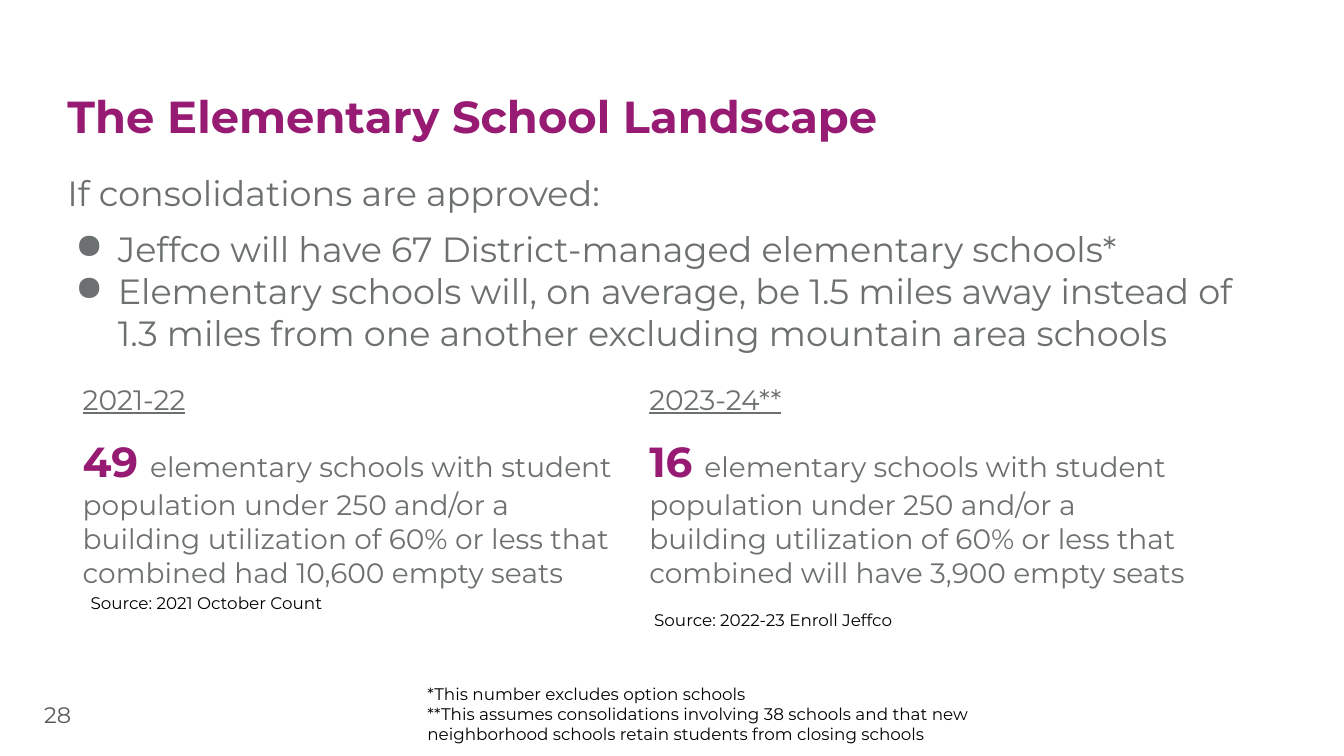
"""Build the slide on the elementary school landscape after consolidations."""
from lxml.etree import SubElement
from pptx import Presentation
from pptx.dml.color import RGBColor
from pptx.enum.text import MSO_ANCHOR
from pptx.oxml.ns import qn
from pptx.util import Inches, Pt

PURPLE = RGBColor(0x97, 0x1B, 0x72)
GRAY = RGBColor(0x6C, 0x70, 0x70)
NUMBER_GRAY = RGBColor(0x59, 0x59, 0x59)
BLACK = RGBColor(0, 0, 0)
MARGIN = Inches(0.1)


def style_font(font, size, color, bold=False):
    font.name = "Montserrat"
    font.size = Pt(size)
    font.color.rgb = color
    font.bold = bold


def add_text(left, top, width, height, lines, size, color, bold=False):
    frame = slide.shapes.add_textbox(
        Inches(left), Inches(top), Inches(width), Inches(height)).text_frame
    frame.word_wrap = True
    frame.margin_left = frame.margin_right = MARGIN
    frame.margin_top = frame.margin_bottom = MARGIN
    frame.text = "\n".join(lines)
    for paragraph in frame.paragraphs:
        style_font(paragraph.font, size, color, bold)
    return frame


presentation = Presentation()
presentation.slide_width = Inches(13.33)
presentation.slide_height = Inches(7.5)
slide = presentation.slides.add_slide(presentation.slide_layouts[6])

add_text(0.57, 0.78, 10.72, 1.23, ["The Elementary School Landscape"], 32, PURPLE, True)

body = add_text(0.57, 1.6, 11.88, 2.15, ["If consolidations are approved:"], 25, GRAY)
bullets = [
    ("Jeffco will have 67 District-managed elementary schools*", 10),
    ("Elementary schools will, on average, be 1.5 miles away instead of "
     "1.3 miles from one another excluding mountain area schools", 0),
]
for text, space_before in bullets:
    paragraph = body.add_paragraph()
    paragraph.text = text
    paragraph.space_before = Pt(space_before)
    properties = paragraph._p.get_or_add_pPr()
    properties.set("marL", str(Inches(0.5)))
    properties.set("indent", str(Inches(-0.42)))
    bullet_color = SubElement(properties, qn("a:buClr"))
    SubElement(bullet_color, qn("a:srgbClr"), val=str(GRAY))
    SubElement(properties, qn("a:buChar"), char="●")
    style_font(paragraph.font, 25, GRAY)

page_number = add_text(0.34, 6.8, 0.8, 0.57, ["28"], 16, NUMBER_GRAY)
page_number.vertical_anchor = MSO_ANCHOR.MIDDLE

years = [
    ("2021-22", "49 ", "had 10,600"),
    ("2023-24**", "16 ", "will have 3,900"),
]
table = slide.shapes.add_table(
    2, 2, Inches(0.72), Inches(3.7), Inches(11.24), Inches(0.84)).table
table.first_row = False
table.horz_banding = False
for column, (year, count, seats) in enumerate(years):
    heading = table.cell(0, column).text_frame.paragraphs[0]
    heading.text = year
    style_font(heading.font, 20, GRAY)
    heading.font.underline = True

    summary = table.cell(1, column).text_frame.paragraphs[0]
    count_run = summary.add_run()
    count_run.text = count
    style_font(count_run.font, 30, PURPLE, True)
    detail_run = summary.add_run()
    detail_run.text = (
        "elementary schools with student population under 250 and/or a "
        f"building utilization of 60% or less that combined {seats} empty seats")
    style_font(detail_run.font, 20, GRAY)

for cell in table.iter_cells():
    cell.margin_left = cell.margin_right = MARGIN
    cell.margin_top = cell.margin_bottom = MARGIN
    for side in ("lnL", "lnR", "lnT", "lnB"):
        border = SubElement(cell._tc.get_or_add_tcPr(), qn(f"a:{side}"), w=str(Pt(0.75)))
        SubElement(SubElement(border, qn("a:solidFill")), qn("a:srgbClr"), val="FFFFFF")
    cell.fill.background()

notes = [
    (4.14, 6.68, 0.81, [
        "*This number excludes option schools",
        "**This assumes consolidations involving 38 schools and that new "
        "neighborhood schools retain students from closing schools"]),
    (0.8, 5.78, 0.4, ["Source: 2021 October Count"]),
    (6.39, 5.95, 0.4, ["Source: 2022-23 Enroll Jeffco"]),
]
for left, top, height, lines in notes:
    add_text(left, top, 6.46, height, lines, 12, BLACK)

presentation.save("out.pptx")
